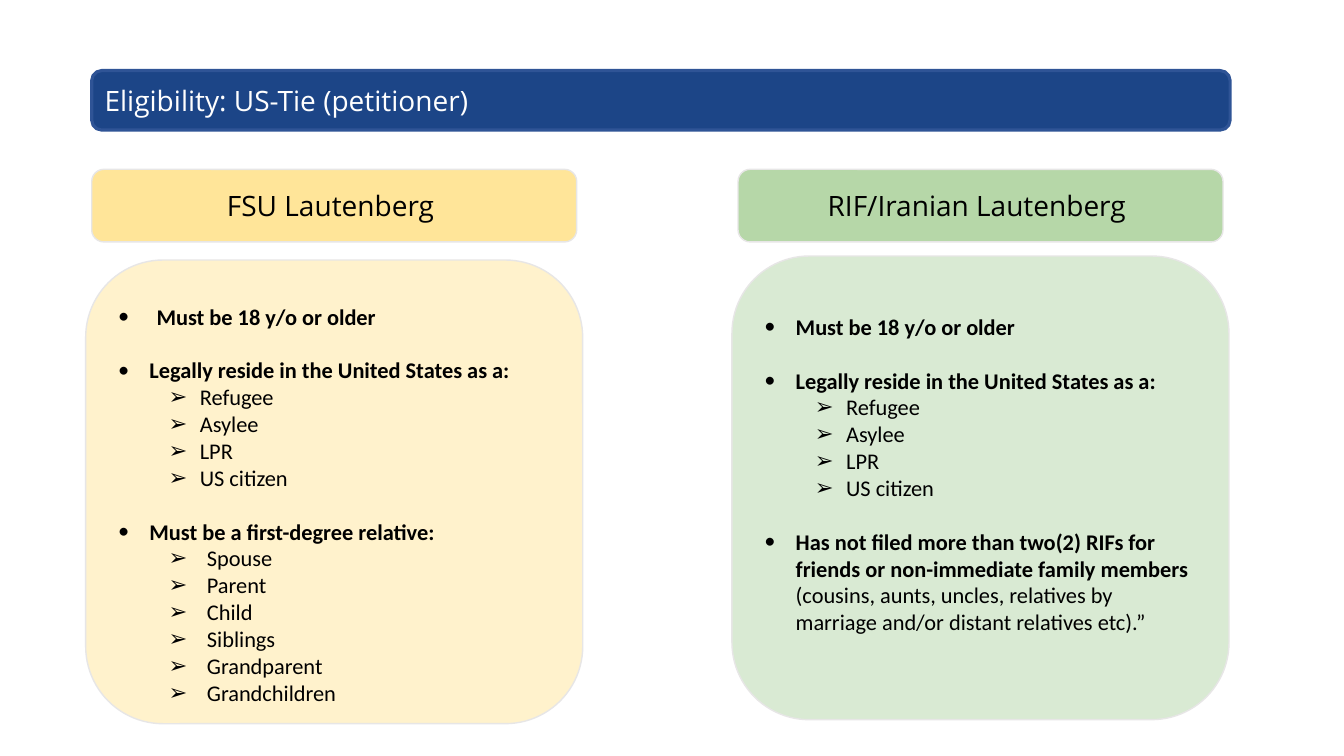
from lxml import etree
from pptx import Presentation, util as u
from pptx.dml.color import RGBColor
from pptx.enum import shapes, text
from pptx.oxml.ns import qn

prs = Presentation()
prs.slide_width, prs.slide_height = u.Inches(13.33), u.Inches(7.5)
s = prs.slides.add_slide(prs.slide_layouts[6])

LEFT, COL_STEP, COL_W = 0.91, 6.41, 4.81
HEAD_TOP, HEAD_H = 1.68, 0.72
PANEL_OUT, PANEL_H = 0.06, 4.6
LINE = 19.2  # points, one blank line between groups


def box(x, y, w, h, fill, line="E7E6E6", weight=1):
    sp = s.shapes.add_shape(shapes.MSO_SHAPE.ROUNDED_RECTANGLE,
                            *[u.Inches(v) for v in (x, y, w, h)])
    sp.shadow.inherit = False
    sp.fill.solid()
    sp.fill.fore_color.rgb = RGBColor.from_string(fill)
    sp.line.color.rgb = RGBColor.from_string(line)
    sp.line.width = u.Pt(weight)
    sp.text_frame.word_wrap = True
    sp.text_frame.vertical_anchor = text.MSO_ANCHOR.MIDDLE
    return sp.text_frame


def write(p, words, color="000000", align=text.PP_ALIGN.LEFT, **fmt):
    p.alignment = align
    r = p.add_run()
    r.text = words
    r.font.color.rgb = RGBColor.from_string(color)
    for key, value in fmt.items():
        setattr(r.font, key, value)


HEADING = {"name": "Open Sans", "size": u.Pt(20)}
BODY = {"name": "Calibri", "size": u.Pt(16)}

# Each group: bold lead, plain tail, lead indent, sub-items, sub-item hang
STATUS = ("Legally reside in the United States as a:", "", 0.31,
          ["Refugee", "Asylee", "LPR", "US citizen"], 0.31)
columns = [
    ("FSU Lautenberg ", "FFE599", "FFF2CC", 2.58, 0.2, [
        ("Must be 18 y/o or older", "", 0.38, [], 0),
        STATUS,
        ("Must be a first-degree relative:", "", 0.31,
         ["Spouse", "Parent", "Child", "Siblings", "Grandparent", "Grandchildren"], 0.38),
    ]),
    ("RIF/Iranian Lautenberg ", "B6D7A8", "D9EAD3", 2.54, 0.34, [
        ("Must be 18 y/o or older", "", 0.31, [], 0),
        STATUS,
        ("Has not filed more than two(2) RIFs for friends or non-immediate family members ",
         "(cousins, aunts, uncles, relatives by marriage and/or distant relatives etc).”",
         0.31, [], 0),
    ]),
]

# Title bar
tf = box(LEFT, 0.7, 11.29, 0.59, "1C4587", "2F5496", 2.25)
write(tf.paragraphs[0], "Eligibility: US-Tie (petitioner)", "FFFFFF", **HEADING)

for col, (heading, head_fill, panel_fill, panel_top, inset, groups) in enumerate(columns):
    x = LEFT + col * COL_STEP

    # Column heading
    tf = box(x, HEAD_TOP, COL_W, HEAD_H, head_fill)
    write(tf.paragraphs[0], heading, align=text.PP_ALIGN.CENTER, **HEADING)

    # Panel with its bulleted criteria
    tf = box(x - PANEL_OUT, panel_top, COL_W + 2 * PANEL_OUT, PANEL_H, panel_fill)
    tf.vertical_anchor = text.MSO_ANCHOR.TOP
    tf.margin_top = u.Inches(inset)
    for g, (lead, tail, indent, items, hang) in enumerate(groups):
        rows = [(lead, tail, 0, indent, "•")] + [(item, "", 1, hang, "➢") for item in items]
        for n, (words, rest, level, dent, bullet) in enumerate(rows):
            p = tf.add_paragraph() if g or n else tf.paragraphs[0]
            write(p, words, bold=level == 0, **BODY)
            if rest:
                write(p, rest, bold=False, **BODY)
            p.level = level
            p.space_before = u.Pt(LINE if g and n == 0 else 0)
            pPr = p._p.get_or_add_pPr()
            pPr.set("marL", str(u.Inches(level * 0.5 + dent)))
            pPr.set("indent", str(-u.Inches(dent)))
            clr = etree.SubElement(pPr, qn("a:buClr"))
            etree.SubElement(clr, qn("a:srgbClr"), val="000000")
            etree.SubElement(pPr, qn("a:buFont"), typeface=BODY["name"])
            etree.SubElement(pPr, qn("a:buChar"), char=bullet)

prs.save("out.pptx")
